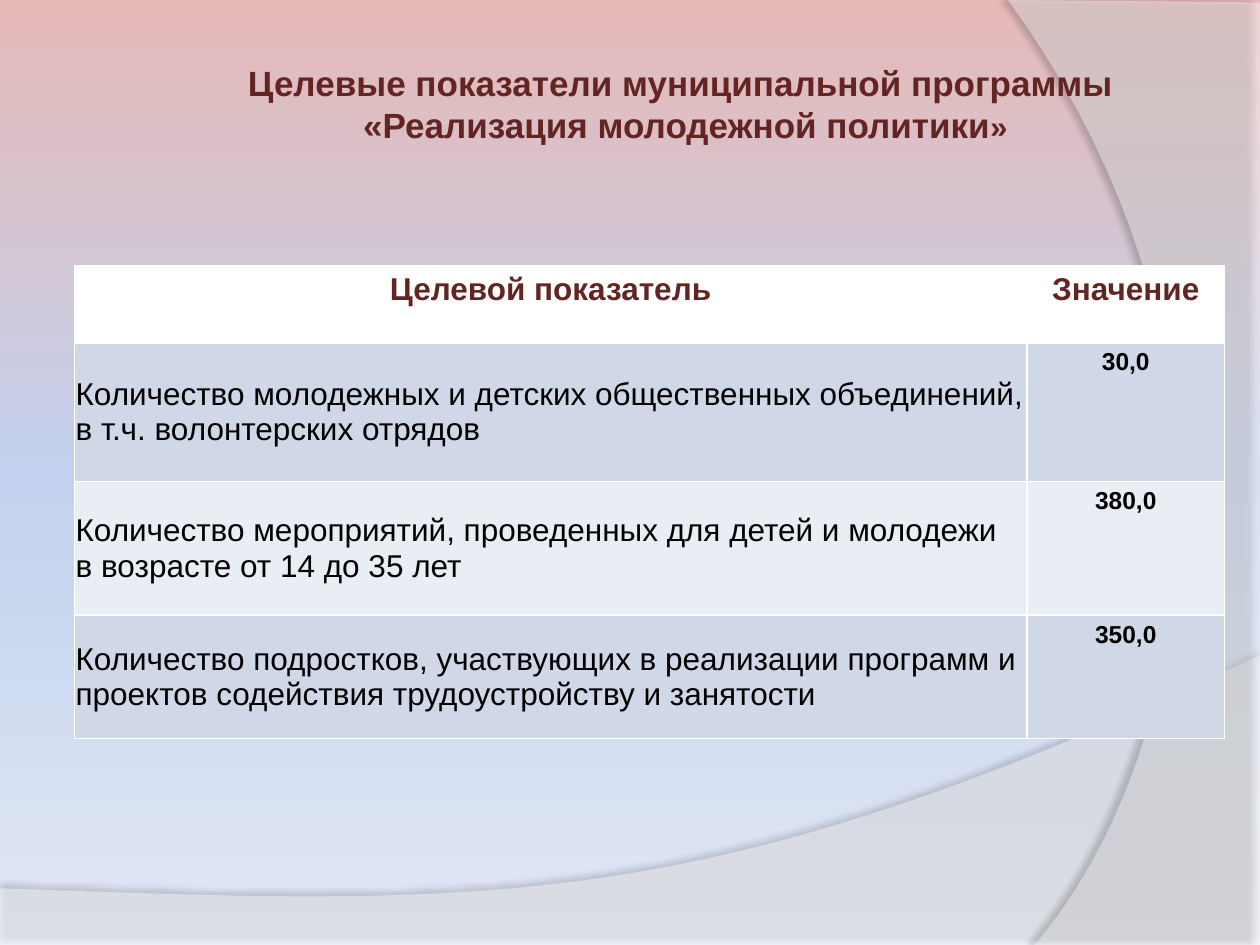
from copy import deepcopy
from lxml import etree
from pptx import Presentation
from pptx import util as u
from pptx.dml.color import RGBColor
from pptx.enum import text
from pptx.oxml import ns

HUES = {"rose": "E6B9B8", "sky": "C2D1ED", "mist": "E1E8F5", "wine": "632523",
        "white": "FFFFFF", "black": "000000", "band": "D0D8E8", "pale": "E9EDF4"}
COLS, ROWS = 100, 75


def curve(a, b, c, d, steps=40):
    for i in range(1, steps + 1):
        t = i / steps
        s = 1 - t
        yield tuple(s**3 * p + 3 * s * s * t * q + 3 * s * t * t * r + t**3 * e
                    for p, q, r, e in zip(a, b, c, d))


class Deck:
    def __init__(self, font):
        self.font = font
        self.prs = Presentation()
        self.prs.slide_width, self.prs.slide_height = u.Inches(10), u.Inches(7.5)
        self.slide = self.prs.slides.add_slide(self.prs.slide_layouts[5])

    def x(self, n):
        return round(self.prs.slide_width * n / COLS)

    def y(self, n):
        return round(self.prs.slide_height * n / ROWS)

    def hue(self, name):
        return RGBColor.from_string(HUES[name])

    def node(self, root, tag, **attrs):
        return etree.SubElement(root, ns.qn(tag), {k: str(v) for k, v in attrs.items()})

    def style(self, para, size, hue, bold, align):
        para.alignment = align
        font = para.font
        font.name, font.size, font.bold = self.font, u.Pt(size), bold
        font.color.rgb = self.hue(hue)

    def back(self, *names):
        fill = self.slide.background.fill
        fill.gradient()
        fill.gradient_angle = 270
        last = fill.gradient_stops[1]._gs
        last.addnext(deepcopy(last))
        for i, (stop, name) in enumerate(zip(fill.gradient_stops, names)):
            stop.color.rgb = self.hue(name)
            stop.position = i / (len(names) - 1)

    def wave(self, points, alpha, shade, dist, angle):
        spots = [(self.x(a), self.y(b)) for a, b in points]
        pen = self.slide.shapes.build_freeform(*spots[0], scale=1)
        pen.add_line_segments(spots[1:], close=True)
        shape = pen.convert_to_shape()
        shape.fill.solid()
        shape.fill.fore_color.rgb = self.hue("white")
        shape.line.fill.background()
        shape.shadow.inherit = False
        props = shape._element.spPr
        self.node(props.find(".//" + ns.qn("a:srgbClr")), "a:alpha", val=alpha * 1000)
        cast = self.node(props.find(ns.qn("a:effectLst")), "a:outerShdw", blurRad=u.Pt(4),
                         dist=u.Pt(dist), dir=angle * 60000, algn="ctr", rotWithShape=0)
        tint = self.node(cast, "a:srgbClr", val=HUES["black"])
        self.node(tint, "a:alpha", val=shade * 1000)

    def title(self, lines, box):
        shape = self.slide.shapes.title
        shape._element.getparent().append(shape._element)
        left, top, wide, high = box
        shape.left, shape.top = self.x(left), self.y(top)
        shape.width, shape.height = self.x(wide), self.y(high)
        frame = shape.text_frame
        frame.word_wrap = True
        frame.auto_size = text.MSO_AUTO_SIZE.SHAPE_TO_FIT_TEXT
        frame.vertical_anchor = text.MSO_ANCHOR.TOP
        for i, parts in enumerate(lines):
            para = frame.add_paragraph() if i else frame.paragraphs[0]
            self.style(para, 20, "wine", True, text.PP_ALIGN.CENTER)
            for words, size in parts:
                run = para.add_run()
                run.text, run.font.size = words, u.Pt(size)

    def cell(self, cell, words, fill, size, hue, bold, align, base):
        cell.text = words
        self.style(cell.text_frame.paragraphs[0], size, hue, bold, align)
        props = cell._tc.get_or_add_tcPr()
        for side in "LRTB":
            edge = self.node(props, "a:ln" + side, w=u.Pt(base if side == "B" else 1))
            paint = self.node(edge, "a:solidFill")
            self.node(paint, "a:srgbClr", val=HUES["white"])
        cell.fill.solid()
        cell.fill.fore_color.rgb = self.hue(fill)

    def table(self, data, left, top, widths, heights):
        grid = self.slide.shapes.add_table(
            len(heights), len(widths), self.x(left), self.y(top),
            self.x(sum(widths)), self.y(sum(heights))).table
        for col, wide in zip(grid.columns, widths):
            col.width = self.x(wide)
        for r, (row, high) in enumerate(zip(grid.rows, heights)):
            row.height = self.y(high)
            for c, words in enumerate(data[r]):
                cell = grid.cell(r, c)
                mid = text.PP_ALIGN.CENTER
                fill = "band" if r % 2 else "pale"
                if r == 0:
                    self.cell(cell, words, "white", 18, "wine", True, mid, 3)
                elif c:
                    self.cell(cell, words, fill, 14, "black", True, mid, 1)
                else:
                    self.cell(cell, words, fill, 18, "black", False, text.PP_ALIGN.LEFT, 1)
                    cell.vertical_anchor = text.MSO_ANCHOR.MIDDLE
                    cell.margin_left = cell.margin_right = cell.margin_top = u.Inches(0.01)
                    cell.margin_bottom = 0


def main():
    deck = Deck("Arial")
    deck.back("rose", "sky", "mist")
    low = curve((100, 52), (55.9, 72.9), (39.1, 71.9), (0, 70.5))
    deck.wave([(0, 75.1), (100, 75.1), (100, 52), *low], 45, 35, 3.5, 270)
    side = curve((82.1, 75), (93.5, 61.9), (101.8, 30), (80, 0))
    deck.wave([(100, 0.2), (100, 75), (82.1, 75), *side], 40, 45, 4, 180)
    deck.title([[("Целевые показатели муниципальной программы ", 20)],
                [("«Реализация молодежной политики", 20), ("»", 18)]],
               (4.3, 4.4, 100.2, 7.7))
    deck.table([
        ("Целевой показатель", "Значение"),
        ("Количество молодежных и детских общественных объединений, "
         "в т.ч. волонтерских отрядов", "30,0"),
        ("Количество мероприятий, проведенных для детей и молодежи\v"
         "в возрасте от 14 до 35 лет", "380,0"),
        ("Количество подростков, участвующих в реализации программ и "
         "проектов содействия трудоустройству и занятости", "350,0"),
    ], 5.9, 21.1, (75.6, 15.7), (6, 11.1, 10.6, 9.8))
    deck.prs.save("out.pptx")


if __name__ == "__main__":
    main()
